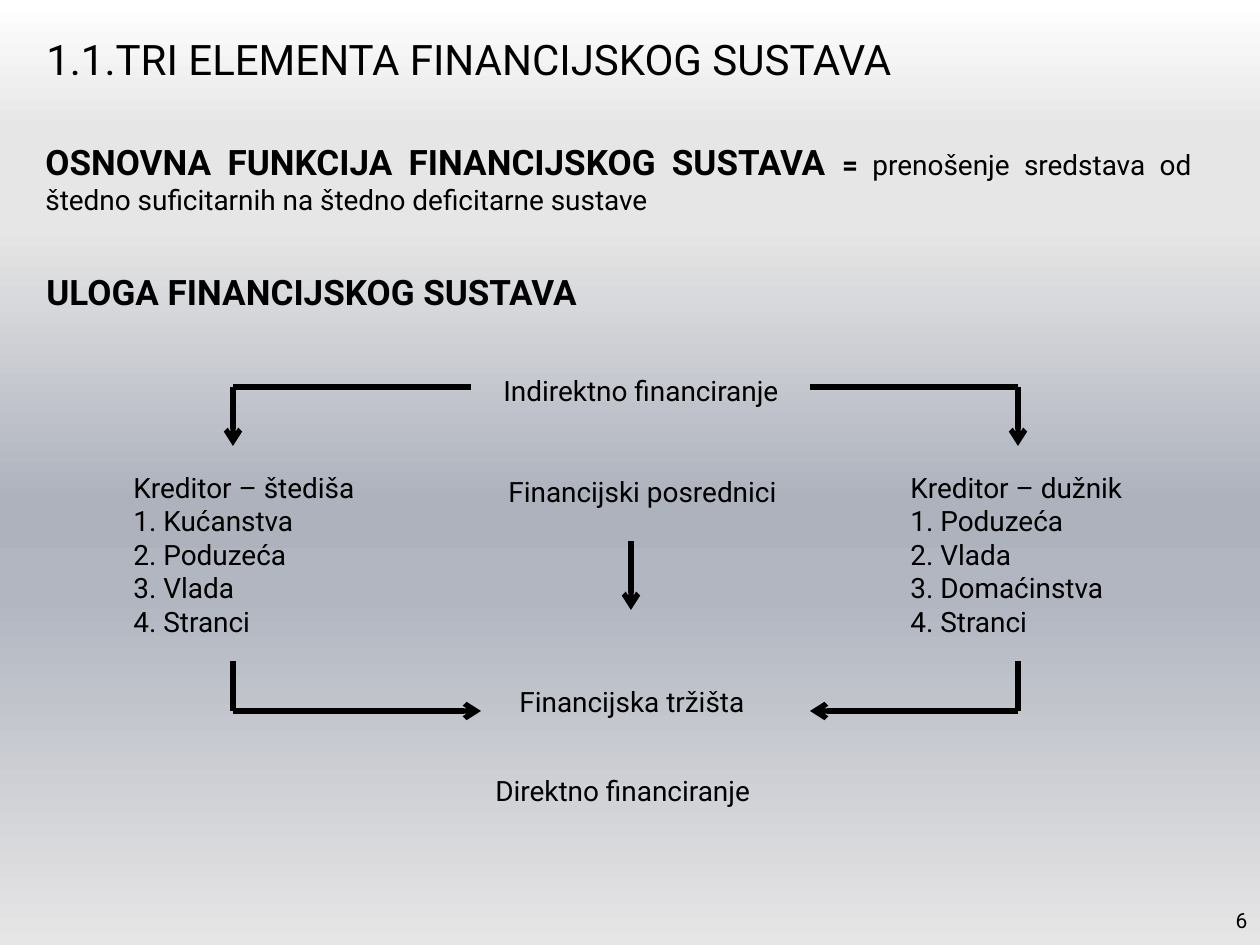
from dataclasses import dataclass

from lxml import etree
from pptx import Presentation
from pptx.dml.color import RGBColor
from pptx.enum.shapes import MSO_CONNECTOR
from pptx.enum.text import MSO_ANCHOR, PP_ALIGN
from pptx.oxml.ns import qn
from pptx.util import Emu, Pt

STRAIGHT = MSO_CONNECTOR.STRAIGHT
LEFT, RIGHT, JUSTIFY = PP_ALIGN.LEFT, PP_ALIGN.RIGHT, PP_ALIGN.JUSTIFY
TOP, MIDDLE = MSO_ANCHOR.TOP, MSO_ANCHOR.MIDDLE
EMU_PER_PX = 914400 // 126


@dataclass(frozen=True)
class Theme:
    font: str = "Roboto"
    ink: str = "000000"
    title: int = 24
    heading: int = 20
    body: int = 16
    page: int = 12
    line: int = 3
    background: tuple = ((0, "FFFFFF"), (14, "E6E6E6"), (24, "E6E6E6"),
                         (53, "ADB2BD"), (63, "B2B6C1"), (100, "E6E6E6"))


THEME = Theme()

TITLE = "1.1.TRI ELEMENTA FINANCIJSKOG SUSTAVA"
FUNCTION = [
    ("OSNOVNA FUNKCIJA FINANCIJSKOG SUSTAVA ", THEME.heading, True),
    ("=", THEME.body, True),
    (" prenošenje sredstava od štedno suficitarnih na štedno deficitarne sustave",
     THEME.body, False),
]
ROLE = "ULOGA FINANCIJSKOG SUSTAVA"
PAGE = "6"

# text, left, top
CHANNELS = [
    ("Indirektno financiranje", 491, 367),
    ("Financijski posrednici", 496, 468),
    ("Financijska tržišta", 507, 678),
    ("Direktno financiranje", 483, 767),
]
# heading, numbered sectors, left
PARTIES = [
    ("Kreditor – štediša", ["Kućanstva", "Poduzeća", "Vlada", "Stranci"], 121),
    ("Kreditor – dužnik", ["Poduzeća", "Vlada", "Domaćinstva", "Stranci"], 898),
]
PARTIES_TOP, NUMBER_INDENT = 464, 30

# outer x, inner x at the top, inner x at the bottom
SIDES = [(233, 471, 481), (1018, 810, 810)]
UPPER, UPPER_TIP, LOWER_START, LOWER = 387, 446, 661, 711
MIDDLE_ARROW = ((631, 541), (631, 610))


def px(value):
    return Emu(value * EMU_PER_PX)


def paint_background(slide):
    fill = slide.background.fill
    fill.gradient()
    fill.gradient_angle = 270
    stops = slide.background._cSld.find(".//" + qn("a:gsLst"))
    for stop in list(stops):
        stops.remove(stop)
    for percent, colour in THEME.background:
        stop = etree.SubElement(stops, qn("a:gs"), pos=str(percent * 1000))
        etree.SubElement(stop, qn("a:srgbClr"), val=colour)


def number_paragraph(paragraph):
    properties = paragraph._p.get_or_add_pPr()
    properties.set("marL", str(px(NUMBER_INDENT)))
    properties.set("indent", str(-px(NUMBER_INDENT)))
    etree.SubElement(properties, qn("a:buFont"), typeface="+mj-lt")
    etree.SubElement(properties, qn("a:buAutoNum"), type="arabicPeriod")


def add_text(slide, content, left, top, width, height, *, size=THEME.body,
             bold=False, align=LEFT, anchor=TOP, numbered=()):
    """Place a string or (text, size, bold) runs, then any numbered items."""
    frame = slide.shapes.add_textbox(px(left), px(top), px(width), px(height)).text_frame
    frame.word_wrap = True
    frame.vertical_anchor = anchor
    first = [(content, size, bold)] if isinstance(content, str) else content
    rows = [first] + [[(item, size, bold)] for item in numbered]
    for index, runs in enumerate(rows):
        paragraph = frame.add_paragraph() if index else frame.paragraphs[0]
        paragraph.alignment = align
        if index:
            number_paragraph(paragraph)
        for text, run_size, run_bold in runs:
            run = paragraph.add_run()
            run.text = text
            run.font.name = THEME.font
            run.font.size = Pt(run_size)
            run.font.bold = run_bold
            run.font.color.rgb = RGBColor.from_string(THEME.ink)


def add_line(slide, start, end, arrow=False):
    line = slide.shapes.add_connector(STRAIGHT, *map(px, (*start, *end)))
    line.line.color.rgb = RGBColor.from_string(THEME.ink)
    line.line.width = Pt(THEME.line)
    if arrow:
        etree.SubElement(line.line._get_or_add_ln(), qn("a:tailEnd"), type="arrow")
    etree.SubElement(line._element.spPr, qn("a:effectLst"))


def main():
    deck = Presentation()
    deck.slide_width, deck.slide_height = px(1260), px(945)
    slide = deck.slides.add_slide(deck.slide_layouts[6])
    paint_background(slide)

    add_text(slide, PAGE, 1194, 895, 66, 50, size=THEME.page, align=RIGHT, anchor=MIDDLE)
    add_text(slide, TITLE, 34, 27, 1190, 64, size=THEME.title)
    add_text(slide, FUNCTION, 33, 134, 1171, 88, align=JUSTIFY)
    add_text(slide, ROLE, 34, 264, 596, 55, size=THEME.heading, bold=True)
    for channel, left, top in CHANNELS:
        add_text(slide, channel, left, top, 422, 46)
    for party, sectors, left in PARTIES:
        add_text(slide, party, left, PARTIES_TOP, 350, 181, numbered=sectors)

    add_line(slide, *MIDDLE_ARROW, arrow=True)
    for outer, upper_inner, lower_inner in SIDES:
        add_line(slide, (upper_inner, UPPER), (outer, UPPER))
        add_line(slide, (outer, UPPER), (outer, UPPER_TIP), arrow=True)
        add_line(slide, (outer, LOWER_START), (outer, LOWER))
        add_line(slide, (outer, LOWER), (lower_inner, LOWER), arrow=True)

    deck.save("out.pptx")


if __name__ == "__main__":
    main()
